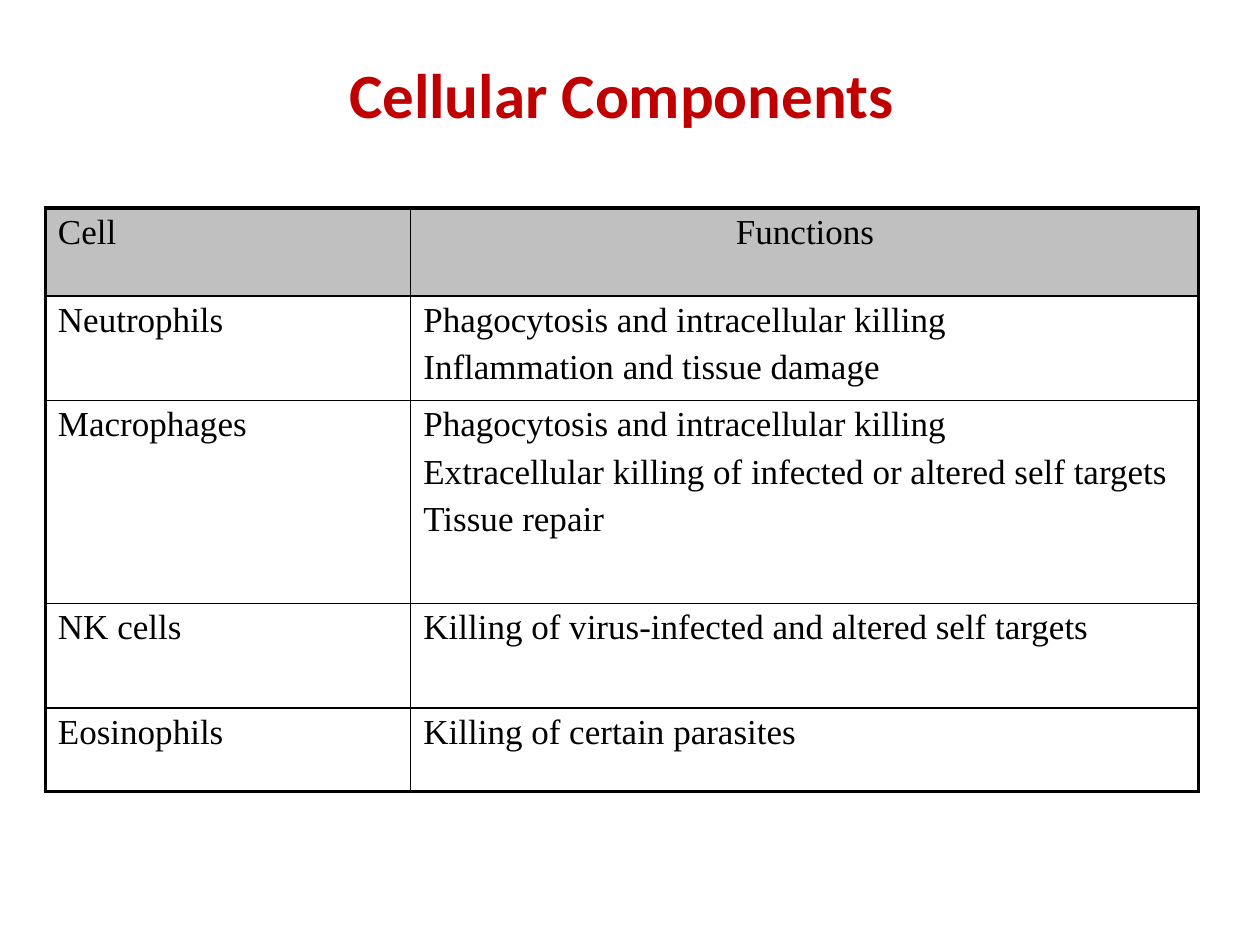
from dataclasses import dataclass

from lxml.etree import SubElement
from pptx import Presentation
from pptx.dml.color import RGBColor as Rgb
from pptx.enum.text import PP_ALIGN as Align
from pptx.oxml.ns import qn
from pptx.util import Inches, Pt


@dataclass(frozen=True)
class Theme:
    red: str = "C00000"
    ink: str = "000000"
    grey: str = "C0C0C0"
    head: str = "Calibri"
    body: str = "Times New Roman"
    big: float = 36
    size: float = 20
    thick: float = 2.25
    thin: float = 1


THEME = Theme()

ROWS = [
    ("Cell", "Functions"),
    ("Neutrophils",
     "Phagocytosis and intracellular killing\n"
     "Inflammation and tissue damage"),
    ("Macrophages",
     "Phagocytosis and intracellular killing\n"
     "Extracellular killing of infected or altered self targets\n"
     "Tissue repair"),
    ("NK cells", "Killing of virus-infected and altered self targets"),
    ("Eosinophils", "Killing of certain parasites"),
]
WIDTHS = [2.9, 6.25]
HEIGHTS = [0.7, 0.83, 1.61, 0.83, 0.66]


def write(frame, text, font=THEME.body, size=THEME.size, color=THEME.ink,
          bold=False, align=Align.LEFT, first=3, gap=4.8):
    """Fill a text frame, one paragraph per line of text."""
    for i, line in enumerate(text.split("\n")):
        para = frame.paragraphs[0] if i == 0 else frame.add_paragraph()
        para.alignment = align
        para.space_before = Pt(gap if i else first)
        run = para.add_run()
        run.text = line
        run.font.name = font
        run.font.size = Pt(size)
        run.font.bold = bold
        run.font.color.rgb = Rgb.from_string(color)


def edge(cell, side, width):
    """Draw one border of a cell."""
    props = cell._tc.get_or_add_tcPr()
    line = SubElement(props, qn(f"a:ln{side}"), w=str(Pt(width)))
    fill = SubElement(line, qn("a:solidFill"))
    SubElement(fill, qn("a:srgbClr"), val=THEME.ink)


def add_title(slide, left, top, width, height):
    box = slide.shapes.add_textbox(left, top, width, height)
    frame = box.text_frame
    frame.word_wrap = True
    frame.margin_left, frame.margin_top = Inches(2.68), Inches(0.42)
    frame.margin_right = frame.margin_bottom = 0
    write(frame, "Cellular Components", font=THEME.head, size=THEME.big,
          color=THEME.red, bold=True, first=1)


def add_grid(slide, left, top, width, height):
    rows, cols = len(ROWS), len(WIDTHS)
    table = slide.shapes.add_table(rows, cols, left, top, width, height).table
    table.first_row = table.horz_banding = False
    for col, size in zip(table.columns, WIDTHS):
        col.width = Inches(size)
    for row, size in zip(table.rows, HEIGHTS):
        row.height = Inches(size)

    for r, texts in enumerate(ROWS):
        for c, text in enumerate(texts):
            cell = table.cell(r, c)
            mid = r == 0 and c == 1
            cell.margin_left = Inches(0.01 if mid else 0.1)
            cell.margin_top = Inches(0.04)
            cell.margin_right = cell.margin_bottom = 0
            write(cell.text_frame, text,
                  align=Align.CENTER if mid else Align.LEFT)

            # Thick outer frame, thin inner lines
            outer = {"L": c == 0, "R": c == cols - 1,
                     "T": r == 0, "B": r == rows - 1}
            for side, out in outer.items():
                edge(cell, side, THEME.thick if out else THEME.thin)

            # Grey header row
            if r == 0:
                cell.fill.solid()
                cell.fill.fore_color.rgb = Rgb.from_string(THEME.grey)
            else:
                cell.fill.background()


def main():
    deck = Presentation()
    deck.slide_width, deck.slide_height = Inches(10), Inches(7.5)
    slide = deck.slides.add_slide(deck.slide_layouts[6])
    add_title(slide, Inches(0.09), Inches(0.02), Inches(9.71), Inches(1.62))
    add_grid(slide, Inches(0.36), Inches(1.65),
             Inches(sum(WIDTHS)), Inches(sum(HEIGHTS)))
    deck.save("out.pptx")


if __name__ == "__main__":
    main()
